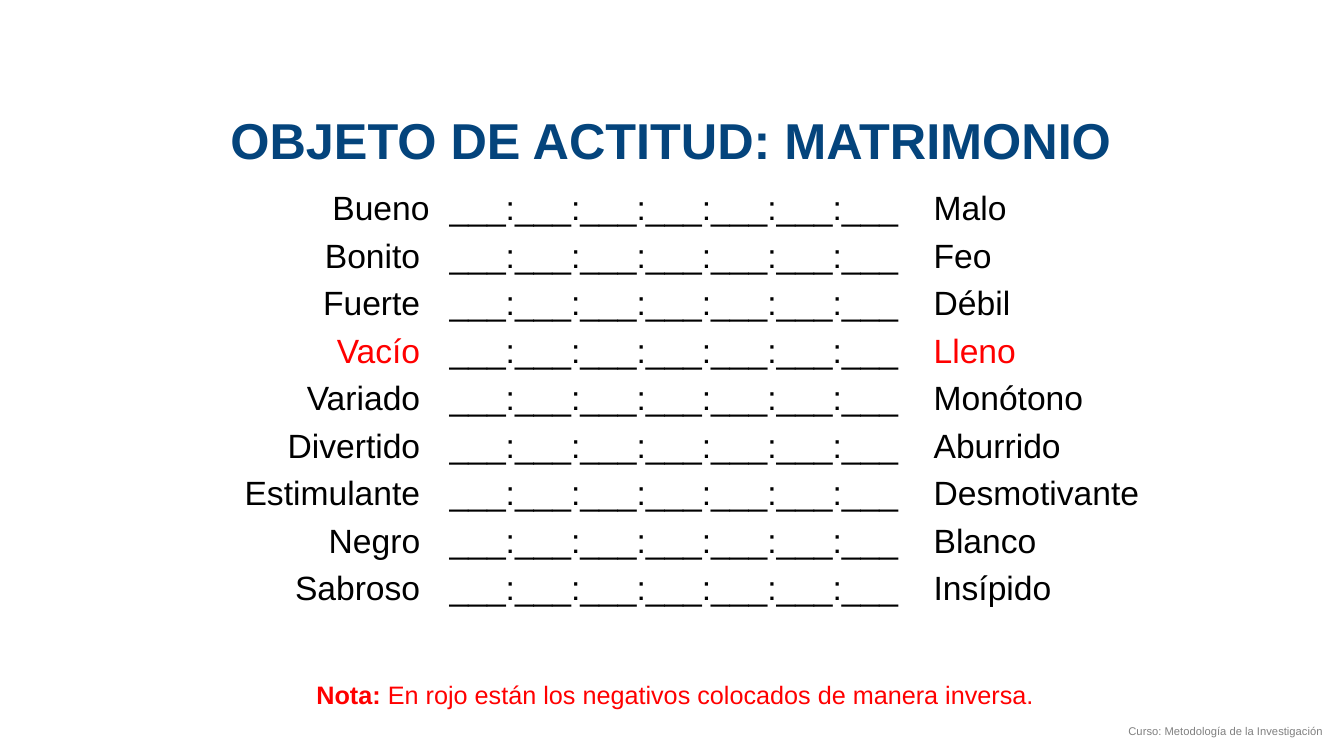
from pptx import Presentation
from pptx.dml.color import RGBColor
from pptx.enum.text import MSO_ANCHOR, PP_ALIGN
from pptx.util import Inches, Pt

NAVY = RGBColor(0x04, 0x44, 0x7C)
RED = RGBColor(0xFF, 0x00, 0x00)
BLACK = RGBColor(0x00, 0x00, 0x00)
GRAY = RGBColor(0x80, 0x80, 0x80)

SCALE = ":".join(["___"] * 7)
OPPOSITES = [
    ("Bueno", "Malo"),
    ("Bonito ", "Feo"),
    ("Fuerte ", "Débil"),
    ("Vacío ", "Lleno"),
    ("Variado ", "Monótono"),
    ("Divertido ", "Aburrido"),
    ("Estimulante ", "Desmotivante"),
    ("Negro ", "Blanco"),
    ("Sabroso ", "Insípido"),
]
REVERSED = {"Vacío "}
HEADER_HEIGHT = 0.48
BODY_HEIGHT = 4.24


def style(para, size, color, align=PP_ALIGN.LEFT):
    para.alignment = align
    para.font.name = "Arial"
    para.font.size = Pt(size)
    para.font.color.rgb = color


def add_box(page, left, top, width, height):
    box = page.shapes.add_textbox(Inches(left), Inches(top), Inches(width), Inches(height))
    box.text_frame.word_wrap = True
    return box.text_frame.paragraphs[0]


deck = Presentation()
deck.slide_width = Inches(13.33)
deck.slide_height = Inches(7.5)
page = deck.slides.add_slide(deck.slide_layouts[5])

# Semantic differential table, under an empty header row
frame = page.shapes.add_table(
    len(OPPOSITES) + 1, 3,
    Inches(2.26), Inches(1.37), Inches(9.76), Inches(HEADER_HEIGHT + BODY_HEIGHT),
)
table = frame.table
table.horz_banding = False
for column, width in zip(table.columns, (2.1, 4.8, 2.86)):
    column.width = Inches(width)
for number, row in enumerate(table.rows):
    row.height = Inches(BODY_HEIGHT / len(OPPOSITES) if number else HEADER_HEIGHT)
for cell in table.iter_cells():
    cell.fill.background()
    cell.margin_top = cell.margin_bottom = Inches(0.04)

for number, (left_word, right_word) in enumerate(OPPOSITES, start=1):
    word_color = RED if left_word in REVERSED else BLACK
    row_texts = [
        (left_word, word_color, PP_ALIGN.RIGHT),
        (SCALE, BLACK, PP_ALIGN.LEFT),
        (right_word, word_color, PP_ALIGN.LEFT),
    ]
    for cell, (text, color, align) in zip(table.rows[number].cells, row_texts):
        cell.text = text
        style(cell.text_frame.paragraphs[0], 24, color, align)

# Title, raised in front of the table's white borders
title = page.shapes.title
frame.element.addnext(title.element)
title.left, title.top = Inches(-0.01), Inches(0.85)
title.width, title.height = Inches(13.33), Inches(1.06)
title.text_frame.text = "OBJETO DE ACTITUD: MATRIMONIO"
title.text_frame.vertical_anchor = MSO_ANCHOR.MIDDLE
heading = title.text_frame.paragraphs[0]
style(heading, 36, NAVY, PP_ALIGN.CENTER)
heading.font.bold = True

# Note
note = add_box(page, 3.04, 6.69, 8.58, 0.4)
style(note, 18, RED)
label = note.add_run()
label.text = "Nota: "
label.font.bold = True
note.add_run().text = "En rojo están los negativos colocados de manera inversa."

# Course credit
course = add_box(page, 9.74, 7.14, 3.48, 0.24)
course.text = "Curso: Metodología de la Investigación"
style(course, 8, GRAY, PP_ALIGN.RIGHT)

deck.save("out.pptx")
